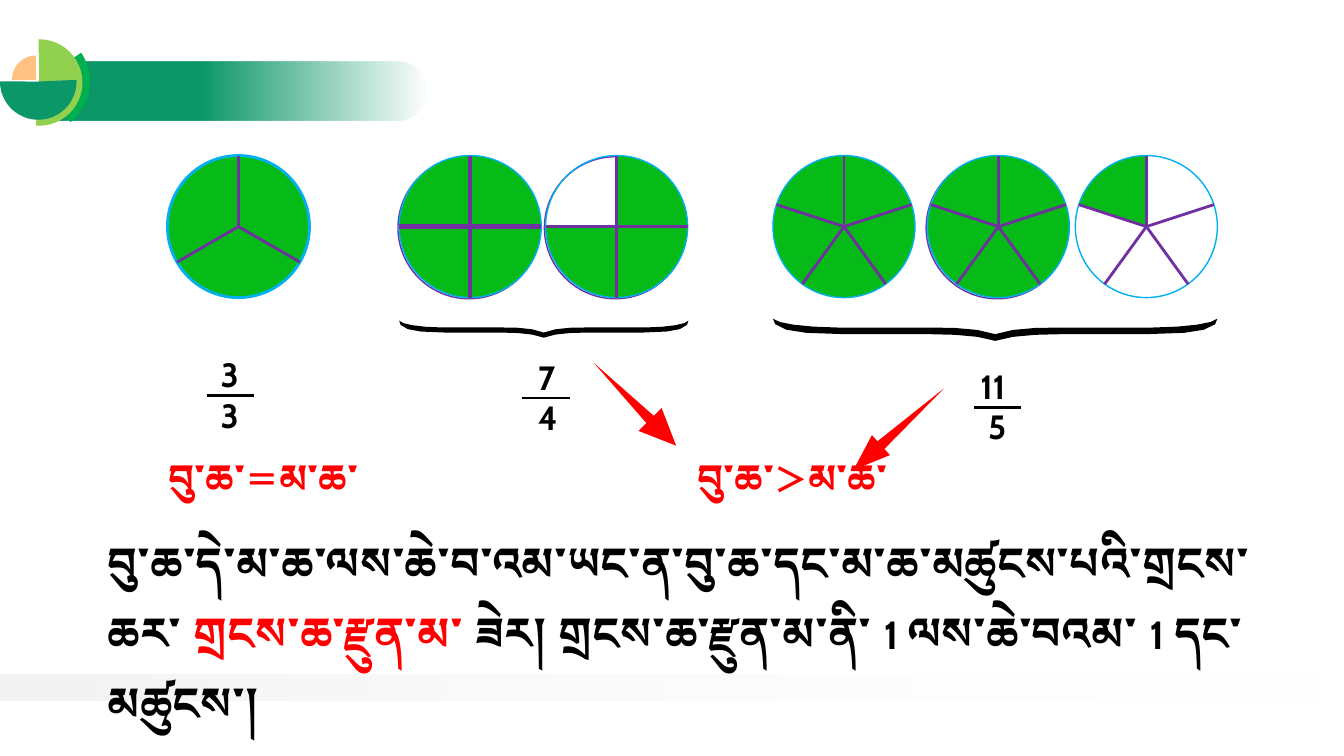
import math

import pptx
import pptx.dml.color
import pptx.enum.shapes
import pptx.enum.text
import pptx.oxml
import pptx.oxml.ns
import pptx.util

Cm, Pt = pptx.util.Cm, pptx.util.Pt
SHAPE = pptx.enum.shapes.MSO_SHAPE

# Content: all lengths in centimetres
FONT = "Cabin"
GREEN, PURPLE, BLUE, RED, BLACK = "06BA17", "7030A0", "00B0F0", "FF0000", "000000"
DIAMETER, CIRCLE_TOP = 3.58, 3.92

# left, parts, first coloured part (clockwise from the top), coloured parts,
# rim weight, spoke weight, second rim in purple
CIRCLES = [
    (4.22, 3, 0, 3, 2, 2, False),
    (10.06, 4, 0, 4, 1, 3, True),
    (13.75, 4, 0, 3, 1, 2, True),
    (19.48, 5, 0, 5, 1, 2, False),
    (23.37, 5, 0, 5, 1, 2, True),
    (27.1, 5, 4, 1, 1, 2, False),
]
BRACES = [(10.06, 8.08, 7.29, 0.43), (19.48, 8.03, 11.2, 0.56)]
# Left half of a brace, as shares of half its width and of its height
BRACE_UPPER = [(0, 0), (0.03, 0.15), (0.09, 0.27), (0.18, 0.36), (0.29, 0.4),
               (0.7, 0.4), (0.82, 0.42), (0.92, 0.51), (1, 0.7)]
BRACE_LOWER = [(1, 1), (0.92, 0.82), (0.82, 0.73), (0.7, 0.7), (0.32, 0.7),
               (0.15, 0.64), (0.06, 0.5), (0.01, 0.25)]

# numerator, denominator, text left, text width, bar left, bar height on slide
FRACTIONS = [
    ("3", "3", 5.31, 1.32, 5.21, 9.96),
    ("7", "4", 13.31, 1.32, 13.16, 10.03),
    ("11", " 5", 24.46, 1.9, 24.54, 10.26),
]
# tail, tip, half the width of the head
ARROWS = [((23.8, 9.78), (21.51, 11.84), 0.34), ((14.96, 9.14), (17.04, 11.23), 0.41)]
CAPTIONS = [(3.99, 7.87, "＝"), (17.32, 10.34, "＞")]
NUMERATOR, DENOMINATOR = "བུ་ཆ་", "མ་ཆ་"
DEFINITION = [
    ("བུ་ཆ་དེ་མ་ཆ་ལས་ཆེ་བ་འམ་ཡང་ན་བུ་ཆ་དང་མ་ཆ་མཚུངས་པའི་གྲངས་ཆར་ ", 32, BLACK),
    ("གྲངས་ཆ་རྫུན་མ་ ", 32, RED),
    ("ཟེར། གྲངས་ཆ་རྫུན་མ་ནི་ ", 32, BLACK),
    ("1 ", 28, BLACK),
    ("ལས་ཆེ་བའམ་ ", 32, BLACK),
    ("1", 28, BLACK),
    (" དང་མཚུངས་།", 32, BLACK),
]
# left, top, size, start and end angle, colour
EMBLEM = [
    (-0.33, 0.76, 2.6, 325.8, 51.6, "00B050"),
    (-0.1, 0.99, 2.18, 269.1, 94.4, "92D050"),
    (0, 1.09, 1.93, 357.6, 180, "0C9769"),
    (0.3, 1.4, 1.22, 179, 269.5, "FFC283"),
]

deck = pptx.Presentation()
deck.slide_width, deck.slide_height = Cm(33.87), Cm(19.05)
slide = deck.slides.add_slide(deck.slide_layouts[6])
shapes = slide.shapes


def rgb(code):
    return pptx.dml.color.RGBColor.from_string(code)


def paint(shape, fill=None, line=None, weight=1):
    shape.shadow.inherit = False
    if fill:
        shape.fill.solid()
        shape.fill.fore_color.rgb = rgb(fill)
    else:
        shape.fill.background()
    if line:
        shape.line.color.rgb = rgb(line)
        shape.line.width = Pt(weight)
    else:
        shape.line.fill.background()
    return shape


def add_preset(kind, left, top, width, height, **look):
    return paint(shapes.add_shape(kind, Cm(left), Cm(top), Cm(width), Cm(height)), **look)


def add_pie(left, top, size, start, end, fill):
    pie = add_preset(SHAPE.PIE, left, top, size, size, fill=fill)
    # Angles are stored in 60000ths of a degree, adjustments in 100000ths
    pie.adjustments[0], pie.adjustments[1] = start * 0.6, end * 0.6


def add_line(start, end, colour, weight=2):
    line = shapes.add_connector(pptx.enum.shapes.MSO_CONNECTOR.STRAIGHT,
                                *(Cm(value) for value in (*start, *end)))
    line.line.color.rgb = rgb(colour)
    line.line.width = Pt(weight)
    line._element.spPr.append(pptx.oxml.parse_xml(
        "<a:effectLst %s/>" % pptx.oxml.ns.nsdecls("a")))


def add_outline(points, fill):
    corners = [(Cm(x), Cm(y)) for x, y in points]
    builder = shapes.build_freeform(*corners[0])
    builder.add_line_segments(corners[1:], close=True)
    paint(builder.convert_to_shape(), fill=fill)


def fade(shape, angle, stops):
    shape.fill.gradient()
    shape.fill.gradient_angle = angle
    for stop, (position, colour, opacity) in zip(shape.fill.gradient_stops, stops):
        stop.position = position
        stop.color.rgb = rgb(colour)
        srgb = stop._gs.find(pptx.oxml.ns.qn("a:srgbClr"))
        alpha = srgb.makeelement(pptx.oxml.ns.qn("a:alpha"), {"val": str(opacity * 1000)})
        srgb.append(alpha)


def add_text(left, top, width, height, paragraphs, spacing=None):
    frame = shapes.add_textbox(Cm(left), Cm(top), Cm(width), Cm(height)).text_frame
    frame.word_wrap = True
    for index, runs in enumerate(paragraphs):
        paragraph = frame.add_paragraph() if index else frame.paragraphs[0]
        paragraph.font.name = FONT
        paragraph.font.bold = True
        if spacing:
            paragraph.line_spacing = spacing
        for text, size, colour in runs:
            run = paragraph.add_run()
            run.text = text
            run.font.size = Pt(size)
            run.font.color.rgb = rgb(colour)


# Header band, emblem and footer band
header = add_preset(SHAPE.ROUND_2_SAME_RECTANGLE, 5.31, -2.41, 1.47, 9.4)
header.rotation = 90
header.adjustments[0] = 0.5
fade(header, 90, [(0.39, "0C9769", 100), (1, "0C9769", 0)])
for piece in EMBLEM:
    add_pie(*piece)
footer = add_preset(SHAPE.ROUNDED_RECTANGLE, -0.33, 16.99, 34.19, 0.66)
footer.adjustments[0] = 0.5
fade(footer, 0, [(0, "D9D9D9", 31), (1, "F2F2F2", 0)])

# Divided circles
radius = DIAMETER / 2
for left, parts, first, coloured, rim, spoke, double_rim in CIRCLES:
    step = 360 / parts
    whole = coloured == parts
    if double_rim:
        add_preset(SHAPE.OVAL, left - 0.03, CIRCLE_TOP + 0.03, DIAMETER, DIAMETER, line=PURPLE)
    if not whole:
        start = 270 + first * step
        add_pie(left, CIRCLE_TOP, DIAMETER, start % 360, (start + coloured * step) % 360, GREEN)
    add_preset(SHAPE.OVAL, left, CIRCLE_TOP, DIAMETER, DIAMETER,
               fill=GREEN if whole else None, line=BLUE, weight=rim)
    centre_x, centre_y = left + radius, CIRCLE_TOP + radius
    for part in range(parts):
        angle = math.radians(part * step - 90)
        end = (centre_x + radius * math.cos(angle), centre_y + radius * math.sin(angle))
        add_line((centre_x, centre_y), end, PURPLE, spoke)

# Braces: the left half is mirrored to the right
for left, top, width, height in BRACES:
    upper = BRACE_UPPER + [(2 - x, y) for x, y in BRACE_UPPER[-2::-1]]
    lower = [(2 - x, y) for x, y in BRACE_LOWER[:0:-1]] + BRACE_LOWER
    add_outline([(left + x * width / 2, top + y * height) for x, y in upper + lower], BLACK)

# Fractions
for numerator, denominator, left, width, bar_left, bar_y in FRACTIONS:
    add_text(left, bar_y - 1.16, width, 2.31,
             [[(numerator, 24, BLACK)], [(denominator, 24, BLACK)]])
    add_line((bar_left, bar_y), (bar_left + 1.2, bar_y), BLACK)

# Captions and definition
for left, width, sign in CAPTIONS:
    add_text(left, 11.3, width, 1.45,
             [[(NUMERATOR, 28, RED), (sign, 24, RED), (DENOMINATOR, 28, RED)]])
add_text(2.46, 12.95, 29.39, 1.55, [DEFINITION], spacing=1.3)

# Arrows: a tapering shaft with a triangular head
for tail, tip, half_head in ARROWS:
    length = math.dist(tail, tip)
    along_x, along_y = (tip[0] - tail[0]) / length, (tip[1] - tail[1]) / length
    neck = length - 0.93
    profile = [(0, 0), (neck, 0.13), (neck, half_head), (length, 0),
               (neck, -half_head), (neck, -0.13)]
    add_outline([(tail[0] + d * along_x - side * along_y, tail[1] + d * along_y + side * along_x)
                 for d, side in profile], RED)

deck.save("out.pptx")
